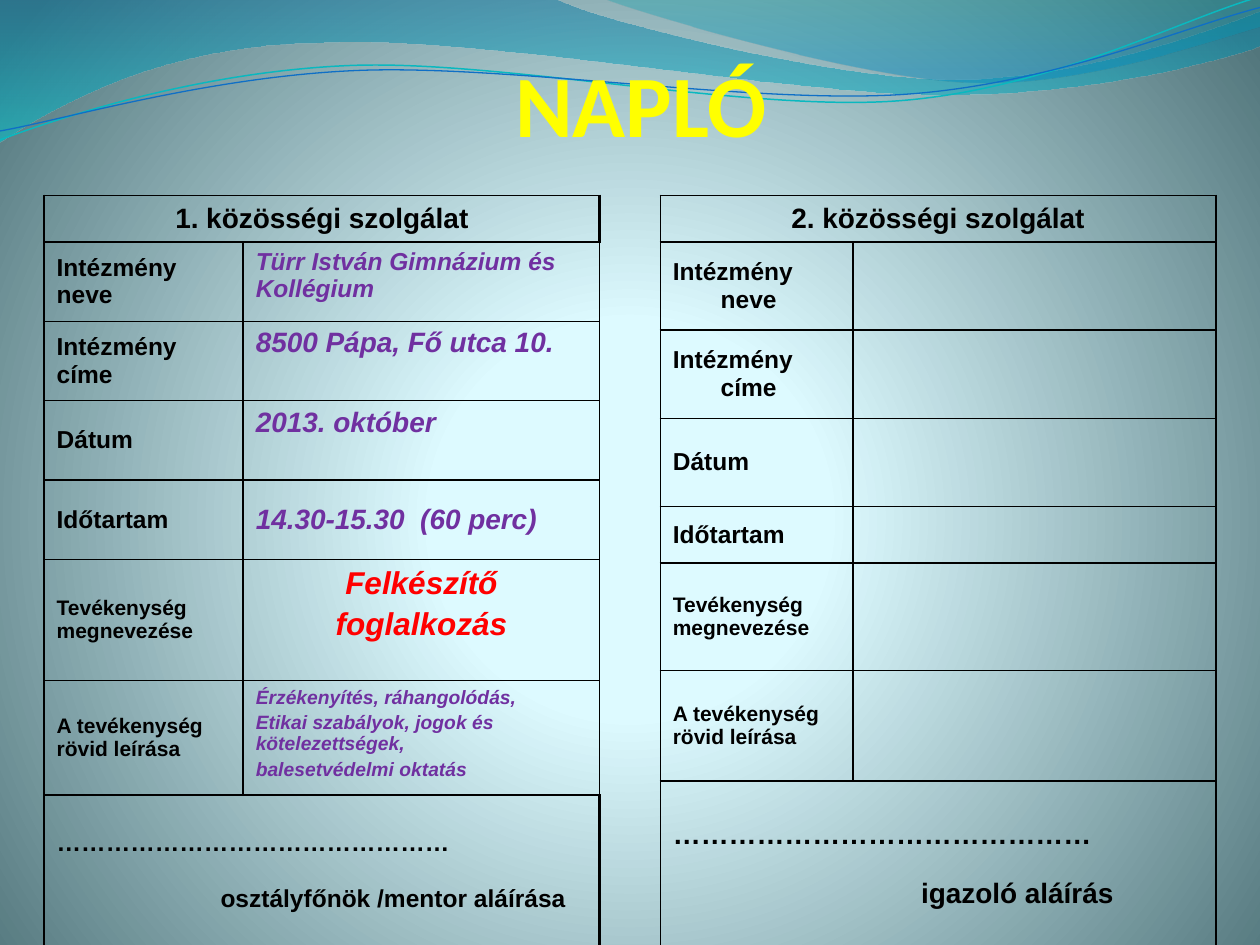
from dataclasses import dataclass
from math import cos, radians, sin

from lxml.etree import SubElement
from pptx import Presentation
from pptx.dml.color import RGBColor
from pptx.enum.text import MSO_ANCHOR as Anchor, PP_ALIGN as Align
from pptx.oxml import parse_xml
from pptx.oxml.ns import nsdecls, qn
from pptx.util import Inches, Pt

BLACK, PURPLE, RED, YELLOW = "000000", "7030A0", "FF0000", "FFFF00"
HANGING = 0.38
TILT = 2.7  # degrees the two thin lines are turned to the left


@dataclass
class Para:
    text: str
    size: float
    color: str = BLACK
    italic: bool = False
    align: Align = Align.LEFT
    before: float = 0
    left: float = 0
    first: float = 0
    font: str = "Arial"


@dataclass
class Cell:
    paras: list[Para]
    anchor: Anchor = Anchor.MIDDLE
    top: float = 0.05


@dataclass
class Log:
    left: float
    cols: list[float]
    heights: list[float]
    rows: list[list[Cell]]
    edge: float  # right border of the full-width rows, points


@dataclass
class Wave:
    start: tuple
    segments: list  # one point is a line, three are a Bézier curve
    stops: tuple = ()
    line: tuple = ()
    pivot: tuple = ()


def rgb(value: str) -> RGBColor:
    return RGBColor.from_string(value)


def set_gradient(pr, stops, shade: str) -> None:
    """Put a gradient in place of the solid fill; stops are position, colour, alpha."""
    gs = "".join(f'<a:gs pos="{pos * 1000}"><a:srgbClr val="{color}">'
                 f'<a:alpha val="{alpha * 1000}"/></a:srgbClr></a:gs>'
                 for pos, color, alpha in stops)
    grad = parse_xml(f'<a:gradFill {nsdecls("a")} rotWithShape="1">'
                     f'<a:gsLst>{gs}</a:gsLst>{shade}</a:gradFill>')
    pr.replace(pr.find(qn("a:solidFill")), grad)


def level(point: tuple, pivot: tuple) -> tuple:
    """Undo the tilt of a point about the pivot."""
    dx, dy, angle = point[0] - pivot[0], point[1] - pivot[1], radians(TILT)
    return (pivot[0] + dx * cos(angle) - dy * sin(angle),
            pivot[1] + dx * sin(angle) + dy * cos(angle))


def bend(sp, segments) -> None:
    """Join the line steps of each three-point segment into one Bézier curve."""
    steps = iter(list(sp.element.iter(qn("a:lnTo"))))
    for seg in segments:
        group = [next(steps) for _ in seg]
        if len(seg) == 3:
            curve = parse_xml(f'<a:cubicBezTo {nsdecls("a")}/>')
            group[0].addprevious(curve)
            for step in group:
                curve.append(step[0])
                step.getparent().remove(step)


def draw_wave(s, wave: Wave) -> None:
    points = [wave.start, *(point for seg in wave.segments for point in seg)]
    if wave.pivot:
        points = [level(point, wave.pivot) for point in points]
    start, *rest = [(Inches(x), Inches(y)) for x, y in points]
    builder = s.shapes.build_freeform(*start)
    builder.add_line_segments(rest, close=bool(wave.stops))
    sp = builder.convert_to_shape()
    bend(sp, wave.segments)
    sp.shadow.inherit = False
    if wave.stops:
        sp.fill.solid()
        set_gradient(sp.element.spPr, wave.stops, '<a:lin ang="5400000" scaled="1"/>')
        sp.line.fill.background()
    else:
        color, width = wave.line
        sp.rotation = 360 - TILT
        sp.fill.background()
        sp.line.color.rgb = rgb(color)
        sp.line.width = Pt(width)


def write(tf, paras: list[Para]) -> None:
    tf.word_wrap = True
    for i, para in enumerate(paras):
        p = tf.paragraphs[0] if i == 0 else tf.add_paragraph()
        p.alignment = para.align
        p.space_before = Pt(para.before)
        p_pr = p._p.get_or_add_pPr()
        p_pr.set("marL", str(Inches(para.left)))
        p_pr.set("indent", str(Inches(para.first)))
        r = p.add_run()
        r.text = para.text
        look = {"name": para.font, "size": Pt(para.size), "bold": True, "italic": para.italic}
        for key, value in look.items():
            setattr(r.font, key, value)
        r.font.color.rgb = rgb(para.color)


def set_borders(cell, right: float) -> None:
    tc_pr = cell._tc.get_or_add_tcPr()
    for i, side in enumerate("LRTB"):
        ln = SubElement(tc_pr, qn(f"a:ln{side}"), w=str(Pt(right if side == "R" else 1)))
        SubElement(SubElement(ln, qn("a:solidFill")), qn("a:srgbClr"), val=BLACK)
        tc_pr.insert(i, ln)


def draw_log(s, log: Log) -> None:
    frame = s.shapes.add_table(len(log.rows), 2, Inches(log.left), Inches(1.55),
                               Inches(sum(log.cols)), Inches(sum(log.heights)))
    table = frame.table
    table.first_row = table.horz_banding = False
    for col, width in zip(table.columns, log.cols):
        col.width = Inches(width)
    for r, (cells, height) in enumerate(zip(log.rows, log.heights)):
        table.rows[r].height = Inches(height)
        full = len(cells) == 1
        for c in range(2):
            cell = table.cell(r, c)
            cell.fill.background()
            set_borders(cell, log.edge if full else 1)
        if full:
            table.cell(r, 0).merge(table.cell(r, 1))
        for c, content in enumerate(cells):
            cell = table.cell(r, c)
            cell.vertical_anchor = content.anchor
            cell.margin_top = Inches(content.top)
            write(cell.text_frame, content.paras)


def heading(text: str) -> list[Cell]:
    return [Cell([Para(text, 16, align=Align.CENTER)])]


def label(size: float, *lines: str, hang: float = 0) -> Cell:
    return Cell([Para(line, size, left=hang, first=-hang) for line in lines])


def entry(size: float, *lines: str, color: str = PURPLE, align: Align = Align.LEFT,
          anchor: Anchor = Anchor.TOP) -> Cell:
    return Cell([Para(line, size, color, True, align, size * 0.2) for line in lines], anchor)


def signature(dots: str, text: str, size: float, left: float) -> list[Cell]:
    return [Cell([Para(dots, size), Para(text, size, before=16, left=left)],
                 Anchor.TOP, 0.05 + size * 1.15 / 72)]


WAVES = [
    Wave((0, -0.01), [[(4.4, -0.01)], [(4.76, 0.17), (6.64, 0.63), (7.58, 0.63)],
                      [(8.53, 0.63), (9.58, 0.26), (10, 0.09)], [(10.01, 0.36)],
                      [(9.83, 0.44), (8.7, 0.76), (7.46, 0.75)],
                      [(6.22, 0.75), (3.82, 0.28), (2.57, 0.34)],
                      [(1.29, 0.35), (0.46, 0.83), (-0.01, 1.13)]],
         stops=((0, "0074A1", 45), (100, "00C6CF", 55))),
    Wave((4.79, -0.01), [[(5.09, 0.11), (6.82, 0.62), (7.69, 0.65)],
                         [(8.56, 0.69), (9.61, 0.32), (10, 0.21)], [(10, 0)]],
         stops=((0, "00A1A9", 30), (80, "008BBF", 45))),
    Wave((0, 1.11), [[(0.48, 0.93), (1.58, 0.57), (2.77, 0.52)],
                     [(3.95, 0.47), (5.93, 0.89), (7.13, 0.8)],
                     [(8.33, 0.71), (9.38, 0.15), (9.98, -0.02)]],
         line=("0AB8BF", 0.85), pivot=(4.99, 0.58)),
    Wave((0, 1.04), [[(0.47, 0.96), (1.64, 0.61), (2.83, 0.56)],
                     [(4.03, 0.51), (5.97, 0.83), (7.17, 0.75)],
                     [(8.36, 0.67), (9.41, 0.21), (10, 0.06)]],
         line=("0F6FC6", 0.75), pivot=(5, 0.59)),
]

BLANK_LABELS = [(14, "Intézmény neve"), (14, "Intézmény címe"), (14, "Dátum"),
                (14, "Időtartam"), (12, "Tevékenység", "megnevezése"),
                (12, "A tevékenység", "rövid leírása")]

LOGS = [
    Log(5.24, [1.53, 2.88], [0.37, 0.7, 0.7, 0.7, 0.45, 0.85, 0.88, 1.33], [
        heading("2. közösségi szolgálat"),
        *[[label(*item, hang=HANGING), Cell([])] for item in BLANK_LABELS],
        signature("………………………………………", "igazoló aláírás", 16, 1.97),
    ], 1),
    Log(0.35, [1.58, 2.83], [0.37, 0.63, 0.63, 0.63, 0.63, 0.96, 0.91, 1.22], [
        heading("1. közösségi szolgálat"),
        [label(14, "Intézmény neve"), entry(14, "Türr István Gimnázium és Kollégium")],
        [label(14, "Intézmény címe"), entry(16, "8500 Pápa, Fő utca 10.")],
        [label(14, "Dátum"), entry(16, "2013. október")],
        [label(14, "Időtartam"), entry(16, "14.30-15.30  (60 perc)", anchor=Anchor.MIDDLE)],
        [label(12, "Tevékenység megnevezése"),
         entry(18, "Felkészítő", "foglalkozás", color=RED, align=Align.CENTER)],
        [label(12, "A tevékenység rövid leírása"),
         entry(11, "Érzékenyítés, ráhangolódás,",
               "Etikai szabályok, jogok és kötelezettségek,", "balesetvédelmi oktatás")],
        signature("…………………………………………", "osztályfőnök /mentor aláírása", 14, 1.3),
    ], 2.25),
]


def main() -> None:
    prs = Presentation()
    prs.slide_width, prs.slide_height = Inches(10), Inches(7.5)
    s = prs.slides.add_slide(prs.slide_layouts[6])
    s.background.fill.solid()
    set_gradient(s.element.cSld.bg.bgPr,
                 ((0, "DEFBFF", 100), (25, "DDFAFF", 100), (100, "52767C", 100)),
                 '<a:path path="circle"><a:fillToRect l="10000" t="110000" '
                 'r="10000" b="100000"/></a:path>')
    for wave in WAVES:
        draw_wave(s, wave)
    tf = s.shapes.add_textbox(Inches(0.59), Inches(0.36), Inches(9), Inches(0.87)).text_frame
    frame = {"vertical_anchor": Anchor.BOTTOM, "margin_left": 0, "margin_right": 0,
             "margin_top": Inches(0.05), "margin_bottom": 0}
    for key, value in frame.items():
        setattr(tf, key, value)
    write(tf, [Para("NAPLÓ", 50, YELLOW, align=Align.CENTER, font="Calibri")])
    for log in LOGS:
        draw_log(s, log)
    prs.save("out.pptx")


if __name__ == "__main__":
    main()
